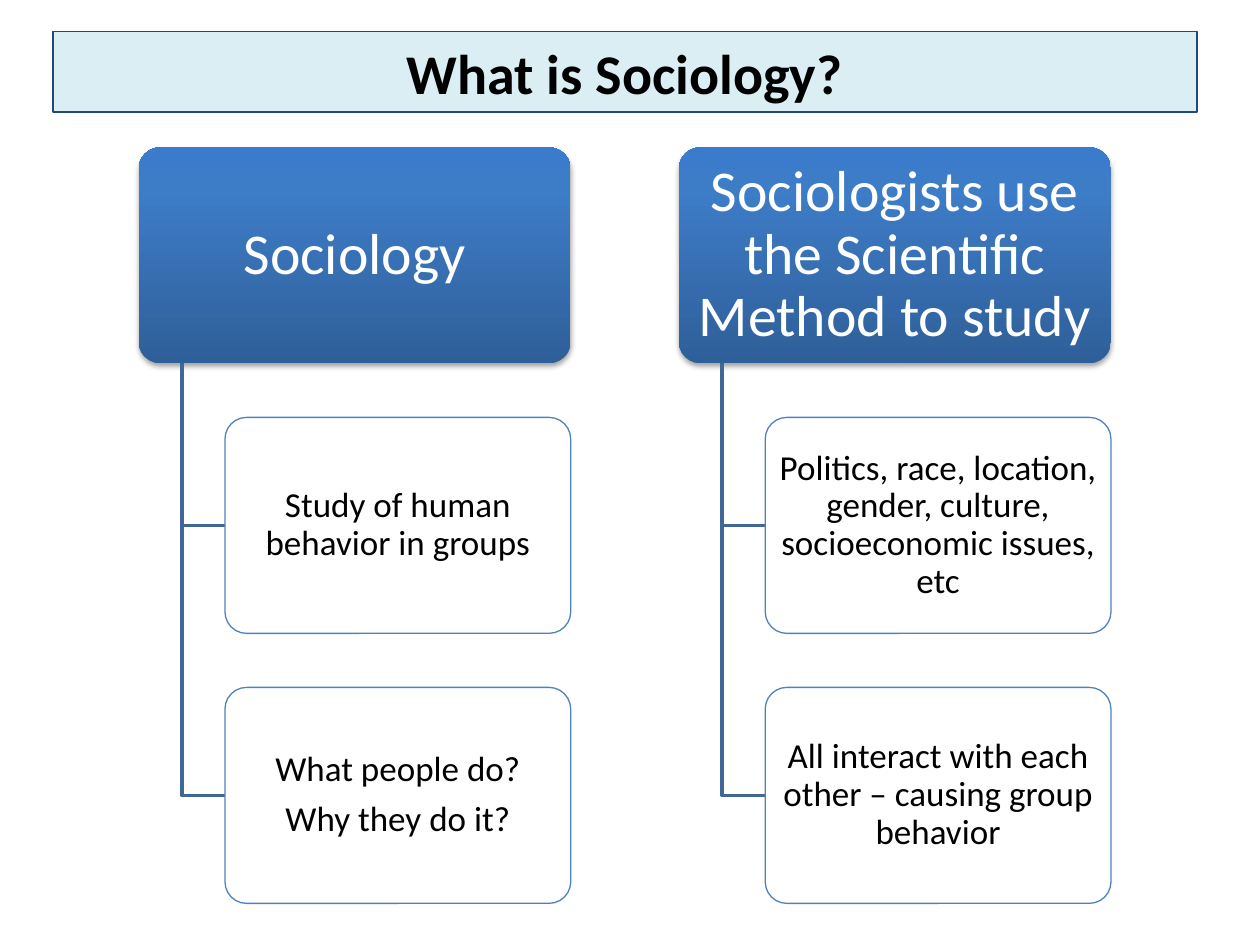
from copy import deepcopy

from lxml.etree import SubElement
from pptx import Presentation
from pptx.dml.color import RGBColor
from pptx.enum.shapes import MSO_SHAPE
from pptx.enum.text import MSO_ANCHOR, PP_ALIGN
from pptx.oxml.ns import qn
from pptx.util import Inches, Pt

COLUMNS = [
    ("Sociology",
     [["Study of human behavior in groups"],
      ["What people do?", "Why they do it?"]]),
    ("Sociologists use the Scientific Method to study",
     [["Politics, race, location, gender, culture, socioeconomic issues, etc"],
      ["All interact with each other – causing group behavior"]]),
]
TITLE = {"size": Pt(32), "bold": True}
HEAD = {"size": Pt(33), "bold": False}
ITEM = {"size": Pt(20), "bold": False}


def rgb(hex_color):
    """Turn a hex string into a colour."""
    return RGBColor.from_string(hex_color)


def add_box(s, kind, box, fill=None, line=None):
    """Add a shape without shadow, with an optional solid fill and outline."""
    sp = s.shapes.add_shape(kind, *[Inches(v) for v in box])
    sp.shadow.inherit = False
    if kind == MSO_SHAPE.ROUNDED_RECTANGLE:
        sp.adjustments[0] = 0.1
    if fill:
        sp.fill.solid()
        sp.fill.fore_color.rgb = rgb(fill)
    if line:
        sp.line.color.rgb = rgb(line)
        sp.line.width = Pt(0.75)
    else:
        sp.line.fill.background()
    return sp


def write(sp, texts, font, color="000000", inset=(0.1, 0.05), spacing=1, after=0):
    """Write centred paragraphs into a shape."""
    tf = sp.text_frame
    tf.word_wrap = True
    tf.vertical_anchor = MSO_ANCHOR.MIDDLE
    tf.margin_left = tf.margin_right = Inches(inset[0])
    tf.margin_top = tf.margin_bottom = Inches(inset[1])
    for i, text in enumerate(texts):
        p = tf.paragraphs[0] if i == 0 else tf.add_paragraph()
        p.alignment = PP_ALIGN.CENTER
        p.line_spacing = spacing
        p.space_after = Pt(round(font["size"].pt * after, 1))
        r = p.add_run()
        r.text = text
        r.font.name = "Calibri"
        r.font.color.rgb = rgb(color)
        for name, value in font.items():
            setattr(r.font, name, value)


def add_title(s, box):
    """Place the title bar."""
    sp = add_box(s, MSO_SHAPE.RECTANGLE, box, "DBEEF4", "1F497D")
    write(sp, ["What is Sociology?"], TITLE)


def add_head(s, box, text):
    """Place a column head with a vertical gradient and a soft shadow."""
    sp = add_box(s, MSO_SHAPE.ROUNDED_RECTANGLE, box)
    sp.fill.gradient()
    sp.fill.gradient_angle = 90
    stops = sp._element.spPr.find(".//" + qn("a:gsLst"))
    stops.append(deepcopy(stops[-1]))
    colors = [(0, "2F5F99"), (0.8, "3D7CC7"), (1, "3A7CCB")]
    for stop, (position, color) in zip(sp.fill.gradient_stops, colors):
        stop.position = position
        stop.color.rgb = rgb(color)
    effects = sp._element.spPr.find(qn("a:effectLst"))
    shadow = SubElement(effects, qn("a:outerShdw"), blurRad=str(Pt(3.1)),
                        dist=str(Pt(1.8)), dir="5400000", rotWithShape="0")
    color = SubElement(shadow, qn("a:srgbClr"), val="000000")
    SubElement(color, qn("a:alpha"), val="35000")
    write(sp, [text], HEAD, "FFFFFF", (0.07, 0.05), 0.9, 0.35)


def add_item(s, box, texts):
    """Place a white, slightly transparent item box."""
    sp = add_box(s, MSO_SHAPE.ROUNDED_RECTANGLE, box, "FFFFFF", "4F81BD")
    color = sp._element.spPr.find(qn("a:solidFill"))[0]
    SubElement(color, qn("a:alpha"), val="90000")
    write(sp, texts, ITEM, inset=(0.04, 0.03), spacing=0.9, after=0.35)


def add_branch(s, x, top, right, bottom):
    """Draw the line that runs down from a head and right to an item."""
    start, corner, end = [(Inches(a), Inches(b)) for a, b in
                          [(x, top), (x, bottom), (right, bottom)]]
    builder = s.shapes.build_freeform(*start)
    builder.add_line_segments([corner, end], close=False)
    sp = builder.convert_to_shape()
    sp.shadow.inherit = False
    sp.fill.background()
    sp.line.color.rgb = rgb("3F6797")
    sp.line.width = Pt(2)


def add_column(s, box, head, items):
    """Place a head and its items, in equal rows with quarter-row gaps."""
    x, y, w, h = box
    row = h / (len(items) * 1.25 + 1)
    left = x + w * 0.2
    add_head(s, (x, y, w, row), head)
    for i, texts in enumerate(items, 1):
        top = y + i * row * 1.25
        add_branch(s, x + w * 0.1, y + row, left, top + row / 2)
        add_item(s, (left, top, w * 0.8, row), texts)


def main():
    """Build the slide and save it."""
    prs = Presentation()
    prs.slide_width, prs.slide_height = Inches(10), Inches(7.5)
    s = prs.slides.add_slide(prs.slide_layouts[6])
    width = 3.43
    for i, (head, items) in enumerate(COLUMNS):
        add_column(s, (1.1 + i * width * 1.25, 1.17, width, 6), head, items)
    add_title(s, (0.42, 0.25, 9.08, 0.64))
    prs.save("out.pptx")


if __name__ == "__main__":
    main()
